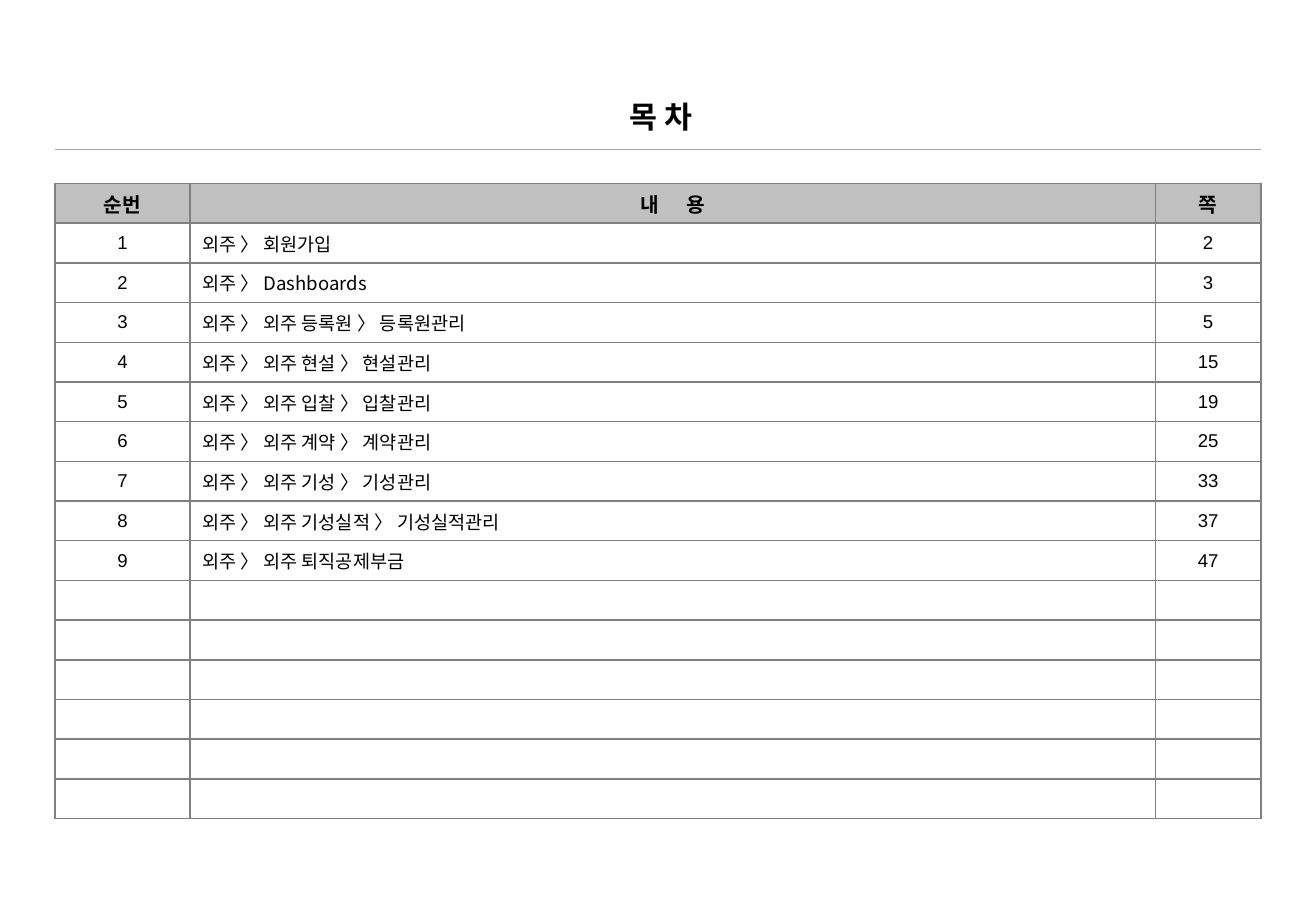
from dataclasses import dataclass
from lxml.etree import SubElement as Sub
from pptx import Presentation
from pptx.dml.color import RGBColor as Rgb
from pptx.enum.shapes import MSO_CONNECTOR as Link
from pptx.enum.text import MSO_ANCHOR as Anchor, PP_ALIGN as Align
from pptx.oxml import parse_xml as to_xml
from pptx.oxml.ns import nsdecls, qn
from pptx.util import Emu, Inches, Pt

WIDE, HIGH = Inches(10.83), Inches(7.5)
LATIN, HANGUL = "Arial", "Noto Sans CJK KR"
BLACK, GRAY, SILVER, RULE = "000000", "808080", "C0C0C0", "A6A6A6"
LEFT, TOP, PITCH = 4.18, 20.14, 4.36
COLS = (10.25, 73.36, 8.03)
SPAN = sum(COLS)
ROWS = 16


@dataclass
class Style:
    font: str
    size: float
    bold: bool = False
    align: Align = Align.CENTER


@dataclass
class Entry:
    page: int
    trail: tuple[str, ...]


TITLE = Style(HANGUL, 18, True)
HEAD = Style(LATIN, 12, True)
COUNT = Style(LATIN, 11)
TOPIC = Style(HANGUL, 11, align=Align.LEFT)

ENTRIES = (
    Entry(2, ("회원가입",)),
    Entry(3, ("Dashboards",)),
    Entry(5, ("외주 등록원", "등록원관리")),
    Entry(15, ("외주 현설", "현설관리")),
    Entry(19, ("외주 입찰", "입찰관리")),
    Entry(25, ("외주 계약", "계약관리")),
    Entry(33, ("외주 기성", "기성관리")),
    Entry(37, ("외주 기성실적", "기성실적관리")),
    Entry(47, ("외주 퇴직공제부금",)),
)


def across(share: float) -> Emu:
    return Emu(round(WIDE * share / 100))


def down(share: float) -> Emu:
    return Emu(round(HIGH * share / 100))


def color(code: str) -> Rgb:
    return Rgb.from_string(code)


def write(frame, text: str, style: Style, gap: float = 0) -> None:
    para = frame.paragraphs[0]
    para.alignment = style.align
    for part in text.partition(" ") if gap else (text,):
        run = para.add_run()
        run.text = part
        font = run.font
        font.name, font.size, font.bold = style.font, Pt(style.size), style.bold
        font.color.rgb = color(BLACK)
        props = run._r.get_or_add_rPr()
        Sub(props, qn("a:ea"), typeface=HANGUL)
        if part == " ":
            props.set("spc", str(round(gap * 100)))


def edge(cell) -> None:
    props = cell._tc.get_or_add_tcPr()
    for spot, side in enumerate("LRTB"):
        props.insert(spot, to_xml(
            f'<a:ln{side} {nsdecls("a")} w="{Pt(1)}"><a:solidFill>'
            f'<a:srgbClr val="{GRAY}"/></a:solidFill></a:ln{side}>'))


def draw_title(slide) -> None:
    box = slide.shapes.add_textbox(across(4.7), down(10.13), across(91), down(5.47))
    box.text_frame.word_wrap = True
    write(box.text_frame, "목 차", TITLE)
    line = slide.shapes.add_connector(
        Link.STRAIGHT, across(LEFT), down(16.4), across(LEFT + SPAN), down(16.4))
    line.line.color.rgb = color(RULE)
    line.line.width = Pt(0.75)
    Sub(line._element.spPr, qn("a:effectLst"))


def draw_table(slide) -> None:
    table = slide.shapes.add_table(
        ROWS, len(COLS), across(LEFT), down(TOP), across(SPAN), down(PITCH * ROWS)).table
    table.first_row = table.horz_banding = False
    for col, share in zip(table.columns, COLS):
        col.width = across(share)
    for row in table.rows:
        row.height = down(PITCH)
        for cell in row.cells:
            cell.vertical_anchor = Anchor.MIDDLE
            cell.margin_top = cell.margin_bottom = 0
            cell.fill.background()
            edge(cell)
    for cell, text, gap in zip(table.rows[0].cells, ("순번", "내 용", "쪽"), (0, 13.3, 0)):
        cell.fill.solid()
        cell.fill.fore_color.rgb = color(SILVER)
        write(cell.text_frame, text, HEAD, gap)
    for rank, entry in enumerate(ENTRIES, 1):
        texts = (str(rank), " 〉 ".join(("외주", *entry.trail)), str(entry.page))
        for cell, text, style in zip(table.rows[rank].cells, texts, (COUNT, TOPIC, COUNT)):
            write(cell.text_frame, text, style)


def main() -> None:
    deck = Presentation()
    deck.slide_width, deck.slide_height = WIDE, HIGH
    slide = deck.slides.add_slide(deck.slide_layouts[6])
    draw_title(slide)
    draw_table(slide)
    deck.save("out.pptx")


if __name__ == "__main__":
    main()
